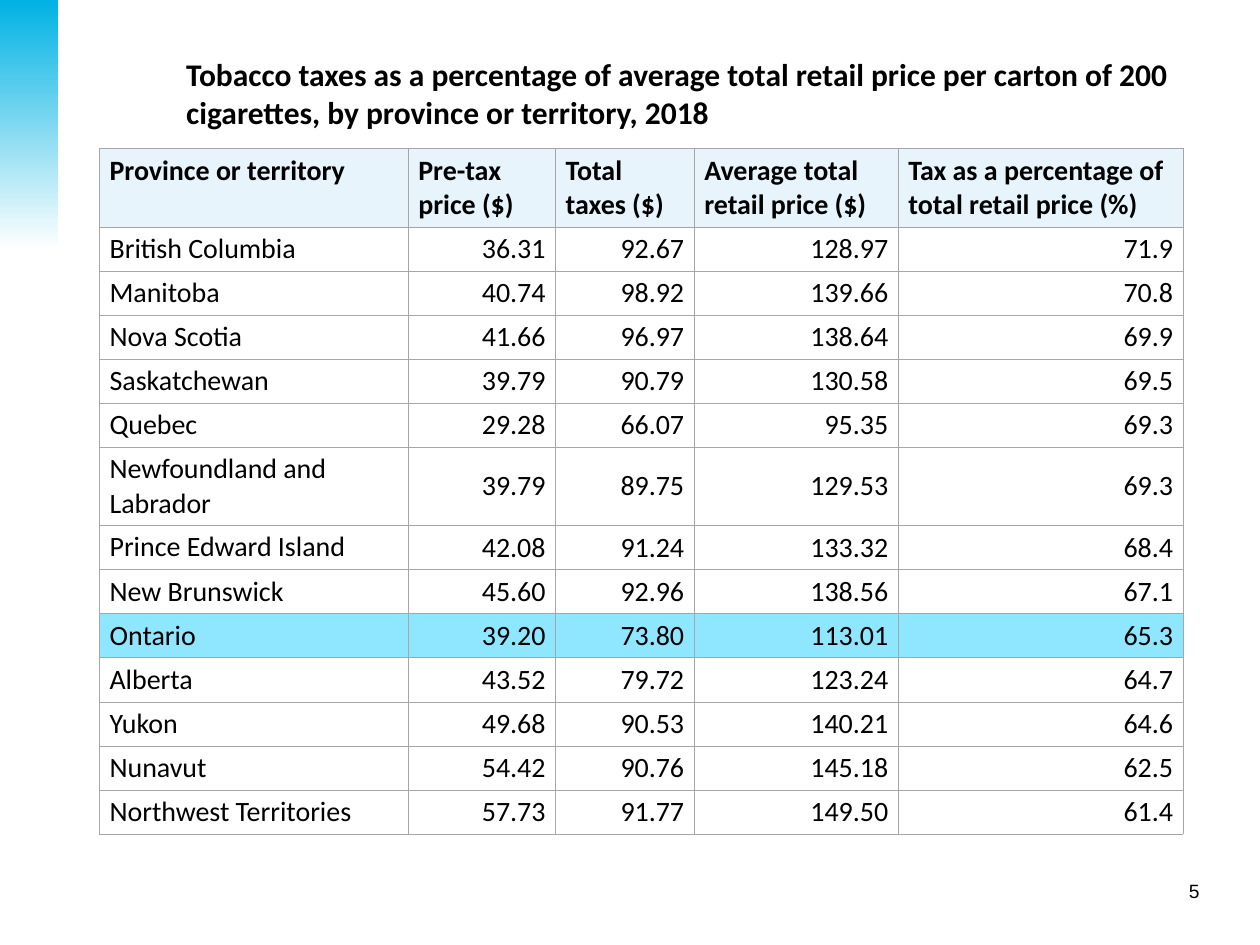
from lxml import etree
from pptx import Presentation
from pptx import util as u
from pptx.dml import color
from pptx.enum import shapes, text
from pptx.oxml import ns

TITLE = ("Tobacco taxes as a percentage of average total retail price per carton of 200 "
         "cigarettes, by province or territory, 2018")
PAGE_NUMBER = "5"
HEADERS = ("Province or territory", "Pre-tax price ($)", "Total taxes ($)",
           "Average total retail price ($)", "Tax as a percentage of total retail price (%)")
PROVINCES = [
    ("British Columbia", "36.31", "92.67", "128.97", "71.9"),
    ("Manitoba", "40.74", "98.92", "139.66", "70.8"),
    ("Nova Scotia", "41.66", "96.97", "138.64", "69.9"),
    ("Saskatchewan", "39.79", "90.79", "130.58", "69.5"),
    ("Quebec", "29.28", "66.07", "95.35", "69.3"),
    ("Newfoundland and Labrador", "39.79", "89.75", "129.53", "69.3"),
    ("Prince Edward Island", "42.08", "91.24", "133.32", "68.4"),
    ("New Brunswick", "45.60", "92.96", "138.56", "67.1"),
    ("Ontario", "39.20", "73.80", "113.01", "65.3"),
    ("Alberta", "43.52", "79.72", "123.24", "64.7"),
    ("Yukon", "49.68", "90.53", "140.21", "64.6"),
    ("Nunavut", "54.42", "90.76", "145.18", "62.5"),
    ("Northwest Territories", "57.73", "91.77", "149.50", "61.4"),
]
COLUMN_WIDTHS = (2.45, 1.17, 1.1, 1.62, 2.26)
ROW_HEIGHT, TALL_ROW_HEIGHT = 0.35, 0.62
TALL_ROWS = (HEADERS[0], "Newfoundland and Labrador")
ROW_FILLS = {HEADERS[0]: "E7F4FB", "Ontario": "8EE7FF"}
BORDER_COLOR, BORDER_WIDTH = "A6A6A6", u.Pt(0.25)
CELL_MARGINS = {"margin_left": 0.08, "margin_top": 0.04, "margin_right": 0.08, "margin_bottom": 0.04}

TITLE_FONT = {"name": "Calibri", "size": u.Pt(18), "bold": True}
HEADER_FONT = {"name": "Calibri", "size": u.Pt(16), "bold": True}
BODY_FONT = {**HEADER_FONT, "bold": False}
NUMBER_FONT = {"name": "Arial", "size": u.Pt(11), "bold": False}


def rgb(value):
    return color.RGBColor.from_string(value)


def write(frame, words, font, alignment=text.PP_ALIGN.LEFT):
    frame.word_wrap = True
    paragraph = frame.paragraphs[0]
    paragraph.alignment = alignment
    run = paragraph.add_run()
    run.text = words
    for name, value in font.items():
        setattr(run.font, name, value)
    run.font.color.rgb = rgb("000000")


def add_label(slide, box, words, font, alignment=text.PP_ALIGN.LEFT):
    label = slide.shapes.add_textbox(*map(u.Inches, box))
    write(label.text_frame, words, font, alignment)


def add_gradient_band(slide):
    band = slide.shapes.add_shape(shapes.MSO_SHAPE.RECTANGLE, 0, 0, u.Inches(0.46), u.Inches(1.98))
    band.shadow.inherit = False
    band.line.fill.background()
    band.fill.gradient()
    band.fill.gradient_angle = 270
    for stop, position, value in zip(band.fill.gradient_stops, (0, 1), ("00B2E3", "FFFFFF")):
        stop.position = position
        stop.color.rgb = rgb(value)


def add_borders(cell):
    properties = cell._tc.get_or_add_tcPr()
    for index, side in enumerate(("lnL", "lnR", "lnT", "lnB")):
        line = etree.Element(ns.qn(f"a:{side}"), w=str(BORDER_WIDTH))
        fill = etree.SubElement(line, ns.qn("a:solidFill"))
        etree.SubElement(fill, ns.qn("a:srgbClr"), val=BORDER_COLOR)
        properties.insert(index, line)


def format_cell(cell, words, fill, is_header, is_name):
    for name, value in CELL_MARGINS.items():
        setattr(cell, name, u.Inches(value))
    if is_header or words in TALL_ROWS:
        cell.vertical_anchor = text.MSO_ANCHOR.TOP
    else:
        cell.vertical_anchor = text.MSO_ANCHOR.BOTTOM if is_name else text.MSO_ANCHOR.MIDDLE
    if fill:
        cell.fill.solid()
        cell.fill.fore_color.rgb = rgb(fill)
    else:
        cell.fill.background()
    alignment = text.PP_ALIGN.LEFT if is_header or is_name else text.PP_ALIGN.RIGHT
    write(cell.text_frame, words, HEADER_FONT if is_header else BODY_FONT, alignment)
    add_borders(cell)


def add_tax_table(slide):
    rows = [HEADERS, *PROVINCES]
    heights = [TALL_ROW_HEIGHT if row[0] in TALL_ROWS else ROW_HEIGHT for row in rows]
    box = (0.79, 1.18, sum(COLUMN_WIDTHS), sum(heights))
    table = slide.shapes.add_table(len(rows), len(HEADERS), *map(u.Inches, box)).table
    table.first_row = table.horz_banding = False
    for column, width in zip(table.columns, COLUMN_WIDTHS):
        column.width = u.Inches(width)
    for row_index, (row, height) in enumerate(zip(rows, heights)):
        table.rows[row_index].height = u.Inches(height)
        for column_index, words in enumerate(row):
            format_cell(table.cell(row_index, column_index), words,
                        ROW_FILLS.get(row[0]), row_index == 0, column_index == 0)


def main():
    presentation = Presentation()
    presentation.slide_width, presentation.slide_height = u.Inches(10), u.Inches(7.5)
    slide = presentation.slides.add_slide(presentation.slide_layouts[6])
    add_label(slide, (8.45, 6.93, 1.17, 0.29), PAGE_NUMBER, NUMBER_FONT, text.PP_ALIGN.RIGHT)
    add_gradient_band(slide)
    add_label(slide, (1.38, 0.39, 8.46, 0.63), TITLE, TITLE_FONT)
    add_tax_table(slide)
    presentation.save("out.pptx")


if __name__ == "__main__":
    main()
